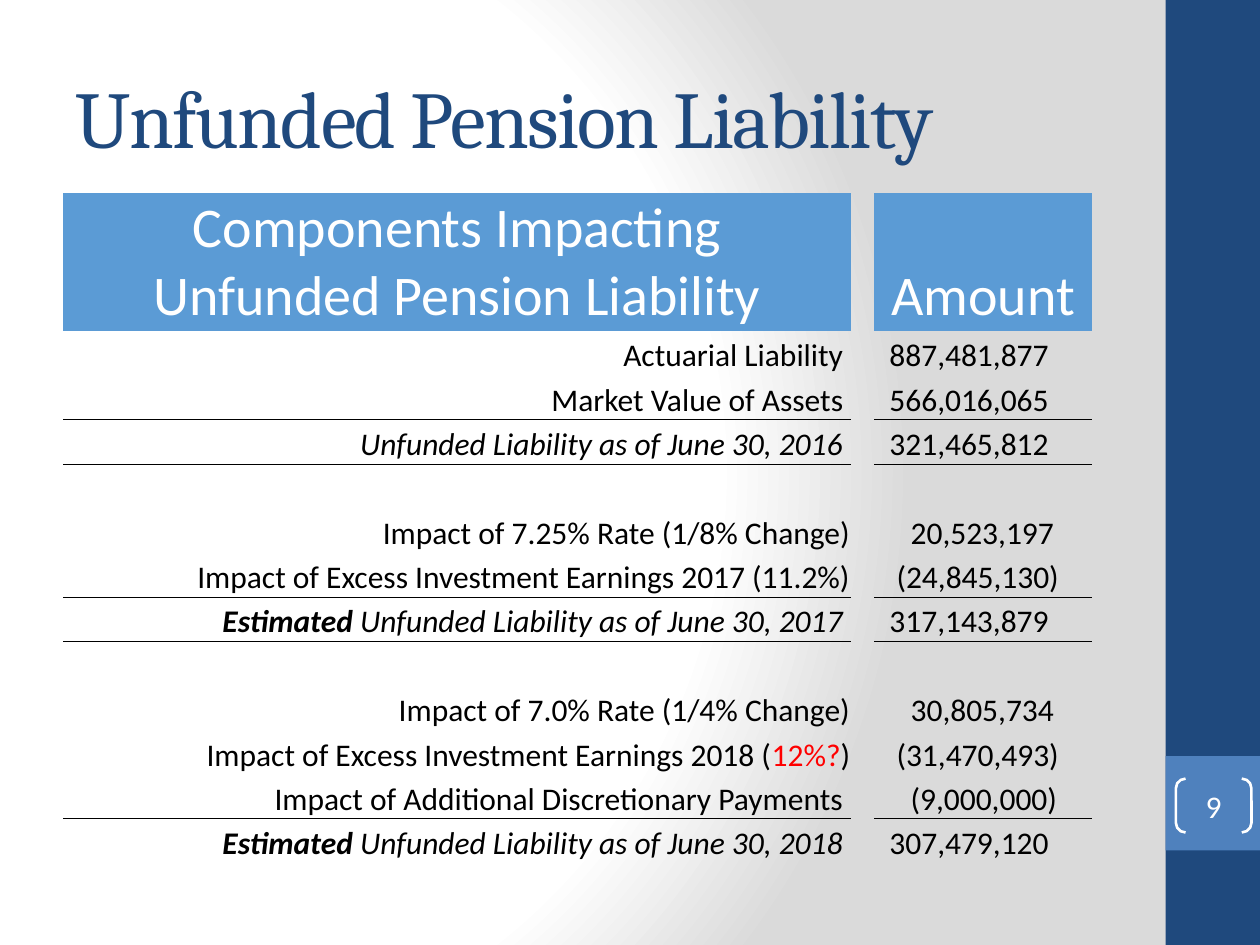
from lxml.etree import SubElement
from pptx import Presentation
from pptx.dml.color import RGBColor
from pptx.enum.shapes import MSO_SHAPE
from pptx.enum.text import MSO_ANCHOR, PP_ALIGN
from pptx.oxml import parse_xml
from pptx.oxml.ns import nsdecls, qn
from pptx.util import Inches, Pt

WIDTH, HEIGHT = 10, 7.5
COLORS = {"navy": "1F497D", "blue": "4F81BD", "header": "5B9BD5", "white": "FFFFFF",
          "black": "000000", "red": "FF0000", "gray": "DADADA"}
PLAIN_TABLE = "{2D5ABB26-0587-4C30-8999-92F81FD0307C}"
SPACE = 0.056
HEADINGS = ("Components Impacting\nUnfunded Pension Liability", "Amount")
ROWS = [
    ([("Actuarial Liability", "")], "887,481,877", 1, 2),
    ([("Market Value of Assets", "")], "566,016,065", 1, 2),
    ([("Unfunded Liability as of June 30, 2016", "total")], "321,465,812", 1, 2),
    None,
    ([("Impact of 7.25% Rate (1/8% Change)", "")], "20,523,197", 0, 5),
    ([("Impact of Excess Investment Earnings 2017 (11.2%)", "")], "(24,845,130)", 0, 3),
    ([("Estimated ", "total bold"), ("Unfunded Liability as of June 30, 2017", "total")],
     "317,143,879", 1, 2),
    None,
    ([("Impact of 7.0% Rate (1/4% Change)", "")], "30,805,734", 0, 5),
    ([("Impact of Excess Investment Earnings 2018 (", ""), ("12%?", "red"), (")", "")],
     "(31,470,493)", 0, 3),
    ([("Impact of Additional Discretionary Payments", "")], "(9,000,000)", 1, 5),
    ([("Estimated ", "total bold"), ("Unfunded Liability as of June 30, 2018", "total")],
     "307,479,120", 1, 2),
]


def rgb(name):
    """Return the named colour."""
    return RGBColor.from_string(COLORS[name])


def place(box, left, top, width, height):
    """Turn shares of a box into absolute lengths."""
    return (box[0] + int(box[2] * left), box[1] + int(box[3] * top),
            int(box[2] * width), int(box[3] * height))


def style(span, size, color, font="Calibri"):
    """Format one run of text."""
    span.font.size = Pt(size)
    span.font.name = font
    span.font.color.rgb = rgb(color)


def paint_background(slide):
    """Fill the slide with a circular white to gray gradient."""
    slide.background.fill.gradient()
    gradient = slide.element.find(".//" + qn("a:gradFill"))
    stops = "".join(f'<a:gs pos="{share * 1000}"><a:srgbClr val="{COLORS[name]}"/></a:gs>'
                    for share, name in ((0, "white"), (75, "white"), (100, "gray")))
    gradient.getparent().replace(gradient, parse_xml(
        f'<a:gradFill {nsdecls("a")} rotWithShape="1"><a:gsLst>{stops}</a:gsLst>'
        '<a:path path="circle"><a:fillToRect l="20000" t="50000" r="100000" b="50000"/>'
        '</a:path></a:gradFill>'))


def add_sidebar(slide, box):
    """Draw the side bar with the bracketed page number."""
    for color, top, height in (("navy", 0, 1), ("blue", 0.8, 0.1)):
        bar = slide.shapes.add_shape(MSO_SHAPE.RECTANGLE, *place(box, 0, top, 1, height))
        bar.shadow.inherit = False
        bar.fill.solid()
        bar.fill.fore_color.rgb = rgb(color)
        bar.line.fill.background()
    bracket = slide.shapes.add_shape(MSO_SHAPE.DOUBLE_BRACKET,
                                     *place(box, 0.11, 0.824, 0.8, 0.057))
    bracket.shadow.inherit = False
    bracket.adjustments[0] = 0.18
    bracket.fill.background()
    bracket.line.color.rgb = rgb("white")
    bracket.line.width = Pt(1.5)
    frame = bracket.text_frame
    frame.margin_left = frame.margin_right = frame.margin_top = frame.margin_bottom = 0
    frame.vertical_anchor = MSO_ANCHOR.MIDDLE
    frame.text = "9"
    frame.paragraphs[0].alignment = PP_ALIGN.CENTER
    style(frame.paragraphs[0].runs[0], 18, "white")


def add_title(slide, box):
    """Place and format the title."""
    title = slide.shapes.title
    title.left, title.top, title.width, title.height = box
    frame = title.text_frame
    frame.text = "Unfunded Pension Liability"
    frame.vertical_anchor = MSO_ANCHOR.MIDDLE
    para = frame.paragraphs[0]
    para.alignment = PP_ALIGN.LEFT
    style(para.runs[0], 46, "navy", "Cambria")
    para.runs[0].font._element.set("spc", "-100")


def draw_rule(cell, side):
    """Give a cell a thin black border on one side."""
    line = parse_xml(f'<a:{side} {nsdecls("a")} w="6350"><a:solidFill>'
                     f'<a:srgbClr val="{COLORS["black"]}"/></a:solidFill></a:{side}>')
    cell._tc.get_or_add_tcPr().insert(0, line)


def fill_header(cell, text):
    """Write a heading on blue."""
    cell.fill.solid()
    cell.fill.fore_color.rgb = rgb("header")
    cell.text_frame.text = text
    for para in cell.text_frame.paragraphs:
        para.alignment = PP_ALIGN.CENTER
        style(para.runs[0], 32, "white")


def fill_row(label, amount, row):
    """Write one component and its amount."""
    spans, value, gap, indent = row
    para = label.text_frame.paragraphs[0]
    para.alignment = PP_ALIGN.RIGHT
    for text, look in spans:
        span = para.add_run()
        span.text = text
        style(span, 18, "red" if look == "red" else "black")
        span.font.italic = "total" in look
        span.font.bold = "bold" in look
    label.margin_right = Inches(0.01 + gap * SPACE)
    amount.text_frame.text = value
    amount.margin_left = Inches(0.01 + indent * SPACE)
    style(amount.text_frame.paragraphs[0].runs[0], 18, "black")


def add_liability_table(slide, box):
    """Build the table of components and amounts."""
    table = slide.shapes.add_table(len(ROWS) + 1, 3, *box).table
    table.first_row = table.horz_banding = False
    properties = table._tbl.tblPr
    identifier = properties.find(qn("a:tableStyleId"))
    if identifier is None:
        identifier = SubElement(properties, qn("a:tableStyleId"))
    identifier.text = PLAIN_TABLE
    for column, share in zip(table.columns, (0.766, 0.022, 0.212)):
        column.width = int(box[2] * share)
    for index, row in enumerate(table.rows):
        row.height = int(box[3] * (0.2 if index == 0 else 0.8 / len(ROWS)))
        for cell in row.cells:
            cell.fill.background()
            cell.margin_left = cell.margin_right = cell.margin_top = Inches(0.01)
            cell.margin_bottom = 0
            cell.vertical_anchor = MSO_ANCHOR.BOTTOM
    for column, heading in zip((0, 2), HEADINGS):
        fill_header(table.cell(0, column), heading)
    for index, row in enumerate(ROWS, start=1):
        if row is None:
            continue
        fill_row(table.cell(index, 0), table.cell(index, 2), row)
        if "total" in row[0][0][1]:
            for column in (0, 2):
                draw_rule(table.cell(index - 1, column), "lnB")
                draw_rule(table.cell(index, column), "lnT")


def main():
    """Build the slide and save it."""
    deck = Presentation()
    deck.slide_width, deck.slide_height = Inches(WIDTH), Inches(HEIGHT)
    page = (0, 0, deck.slide_width, deck.slide_height)
    slide = deck.slides.add_slide(deck.slide_layouts[5])
    paint_background(slide)
    add_sidebar(slide, place(page, 0.925, 0, 0.075, 1))
    add_title(slide, place(page, 0.05, 0.04, 0.833, 0.167))
    add_liability_table(slide, place(page, 0.05, 0.204, 0.817, 0.704))
    deck.save("out.pptx")


if __name__ == "__main__":
    main()
